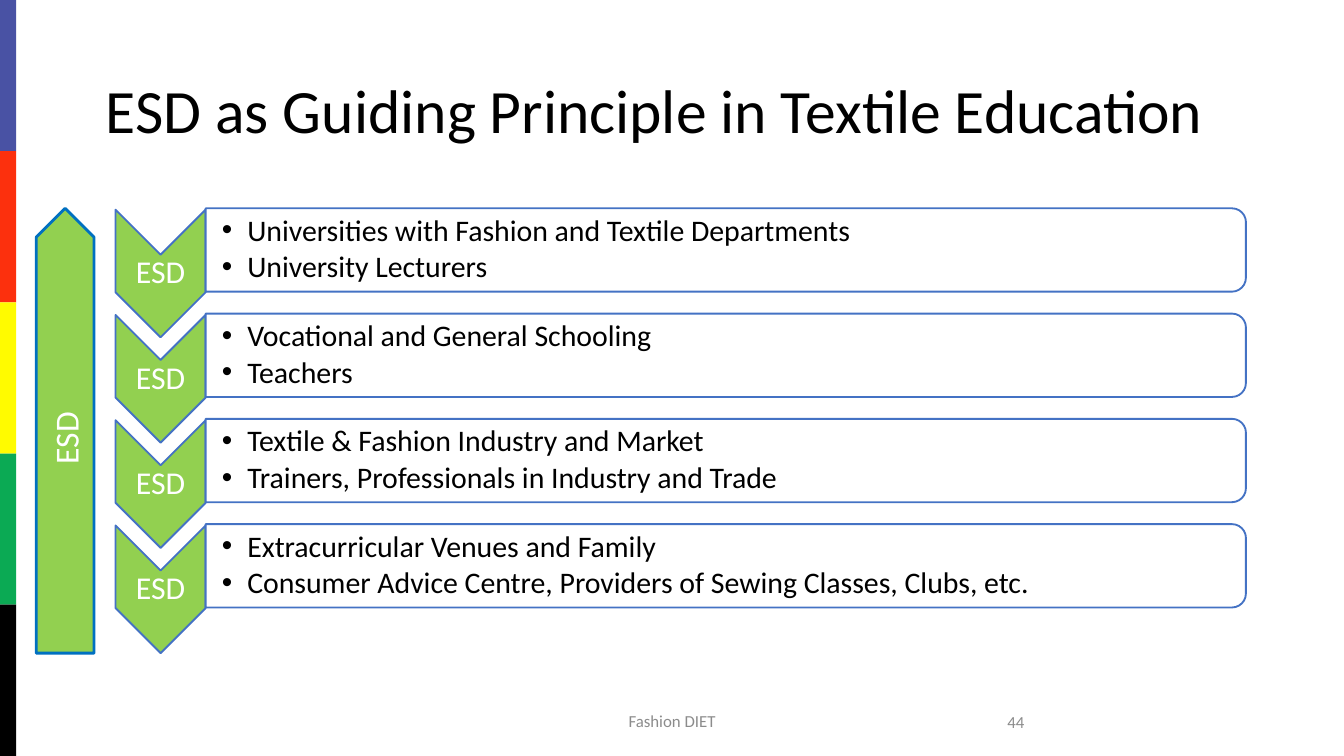
from lxml import etree
from pptx import Presentation
from pptx.dml.color import RGBColor
from pptx.enum.shapes import MSO_SHAPE
from pptx.enum.text import MSO_ANCHOR, PP_ALIGN
from pptx.oxml.ns import qn
from pptx.util import Inches, Pt

RECTANGLE = MSO_SHAPE.RECTANGLE
CHEVRON = MSO_SHAPE.CHEVRON
PENTAGON = MSO_SHAPE.PENTAGON
ROUNDED_BAR = MSO_SHAPE.ROUND_2_SAME_RECTANGLE
MIDDLE = MSO_ANCHOR.MIDDLE
LEFT, CENTER, RIGHT = PP_ALIGN.LEFT, PP_ALIGN.CENTER, PP_ALIGN.RIGHT

TITLE = "ESD as Guiding Principle in Textile Education"
LABEL = "ESD"
FOOTER = "Fashion DIET"
PAGE_NUMBER = "44"
ROWS = [
    ["Universities with Fashion and Textile Departments", "University Lecturers"],
    ["Vocational and General Schooling", "Teachers"],
    ["Textile & Fashion Industry and Market", "Trainers, Professionals in Industry and Trade"],
    [
        "Extracurricular Venues and Family",
        "Consumer Advice Centre, Providers of Sewing Classes, Clubs, etc.",
    ],
]
THEME = {
    "font": "Calibri",
    "text": "000000",
    "light": "FFFFFF",
    "muted": "8C8C8C",
    "green": "92D050",
    "outline": "4472C4",
    "arrow_outline": "0070C0",
    "stripes": ["4952A4", "FC300D", "FFFB00", "0BAA54", "000000"],
    "title_size": 33,
    "arrow_size": 18,
    "label_size": 17,
    "body_size": 16,
    "footer_size": 9,
}
SLIDE_WIDTH, SLIDE_HEIGHT = 10, 10 * 9 / 16
STRIPE_WIDTH = 0.12
FIRST_TOP, LAST_TOP = 1.7, 4.05
ROW_PITCH = (LAST_TOP - FIRST_TOP) / (len(ROWS) - 1)
DEFAULT_INSETS = (0.1, 0.05, 0.1, 0.05)
LABEL_INSETS = (0.01, 0.01, 0.01, 0.01)
BODY_INSETS = (0.12, 0.01, 0.01, 0.01)


def color(name):
    return RGBColor.from_string(THEME.get(name, name))


def add_shape(slide, kind, box, fill, line=None, line_width=1, rotation=0):
    shape = slide.shapes.add_shape(kind, *map(Inches, box))
    shape.shadow.inherit = False
    shape.rotation = rotation
    shape.fill.solid()
    shape.fill.fore_color.rgb = color(fill)
    if line:
        shape.line.color.rgb = color(line)
        shape.line.width = Pt(line_width)
    else:
        shape.line.fill.background()
    return shape


def add_bullet(paragraph):
    paragraph.level = 1
    properties = paragraph._p.get_or_add_pPr()
    properties.set("marL", str(Inches(0.19)))
    properties.set("indent", str(Inches(-0.19)))
    etree.SubElement(properties, qn("a:buFont")).set("typeface", "Arial")
    etree.SubElement(properties, qn("a:buChar")).set("char", "•")


def write_text(shape, lines, size, text_color, align, insets=DEFAULT_INSETS,
               line_spacing=1, space_after=0, bullets=False):
    frame = shape.text_frame
    frame.word_wrap = True
    frame.vertical_anchor = MIDDLE
    frame.margin_left, frame.margin_top, frame.margin_right, frame.margin_bottom = map(Inches, insets)
    frame.text = "\n".join(lines)
    for paragraph in frame.paragraphs:
        if bullets:
            add_bullet(paragraph)
        paragraph.alignment = align
        paragraph.line_spacing = line_spacing
        paragraph.space_after = Pt(space_after)
        paragraph.font.name = THEME["font"]
        paragraph.font.size = Pt(THEME[size])
        paragraph.font.color.rgb = color(text_color)


def add_text(slide, box, *text, **options):
    write_text(slide.shapes.add_textbox(*map(Inches, box)), *text, **options)


def add_row(slide, top, lines):
    add_shape(slide, CHEVRON, (0.72, top, 0.95, 0.67), "green", "outline", rotation=90)
    add_text(slide, (0.86, top + 0.19, 0.67, 0.29), [LABEL], "label_size", "light", CENTER,
             insets=LABEL_INSETS, line_spacing=0.9)
    add_shape(slide, ROUNDED_BAR, (5.09, top - 3.71, 0.62, 7.74), "light", "outline", rotation=90)
    add_text(slide, (1.53, top - 0.12, 7.71, 0.56), lines, "body_size", "text", LEFT,
             insets=BODY_INSETS, line_spacing=0.9, space_after=2.4, bullets=True)


def main():
    presentation = Presentation()
    presentation.slide_width = Inches(SLIDE_WIDTH)
    presentation.slide_height = Inches(SLIDE_HEIGHT)
    slide = presentation.slides.add_slide(presentation.slide_layouts[6])

    stripe_height = SLIDE_HEIGHT / len(THEME["stripes"])
    for index, stripe in enumerate(THEME["stripes"]):
        add_shape(slide, RECTANGLE, (0, index * stripe_height, STRIPE_WIDTH, stripe_height), stripe)

    add_text(slide, (0.69, 0.3, 8.62, 1.09), [TITLE], "title_size", "text", LEFT, line_spacing=0.9)
    add_text(slide, (3.31, 5.21, 3.38, 0.3), [FOOTER], "footer_size", "muted", CENTER)
    add_text(slide, (5.47, 5.22, 2.25, 0.3), [PAGE_NUMBER], "footer_size", "muted", RIGHT)

    for index, lines in enumerate(ROWS):
        add_row(slide, FIRST_TOP + index * ROW_PITCH, lines)

    arrow = add_shape(slide, PENTAGON, (-1.17, 2.99, 3.31, 0.43), "green", "arrow_outline",
                      line_width=1.5, rotation=270)
    write_text(arrow, [LABEL], "arrow_size", "light", CENTER)

    presentation.save("out.pptx")


if __name__ == "__main__":
    main()
